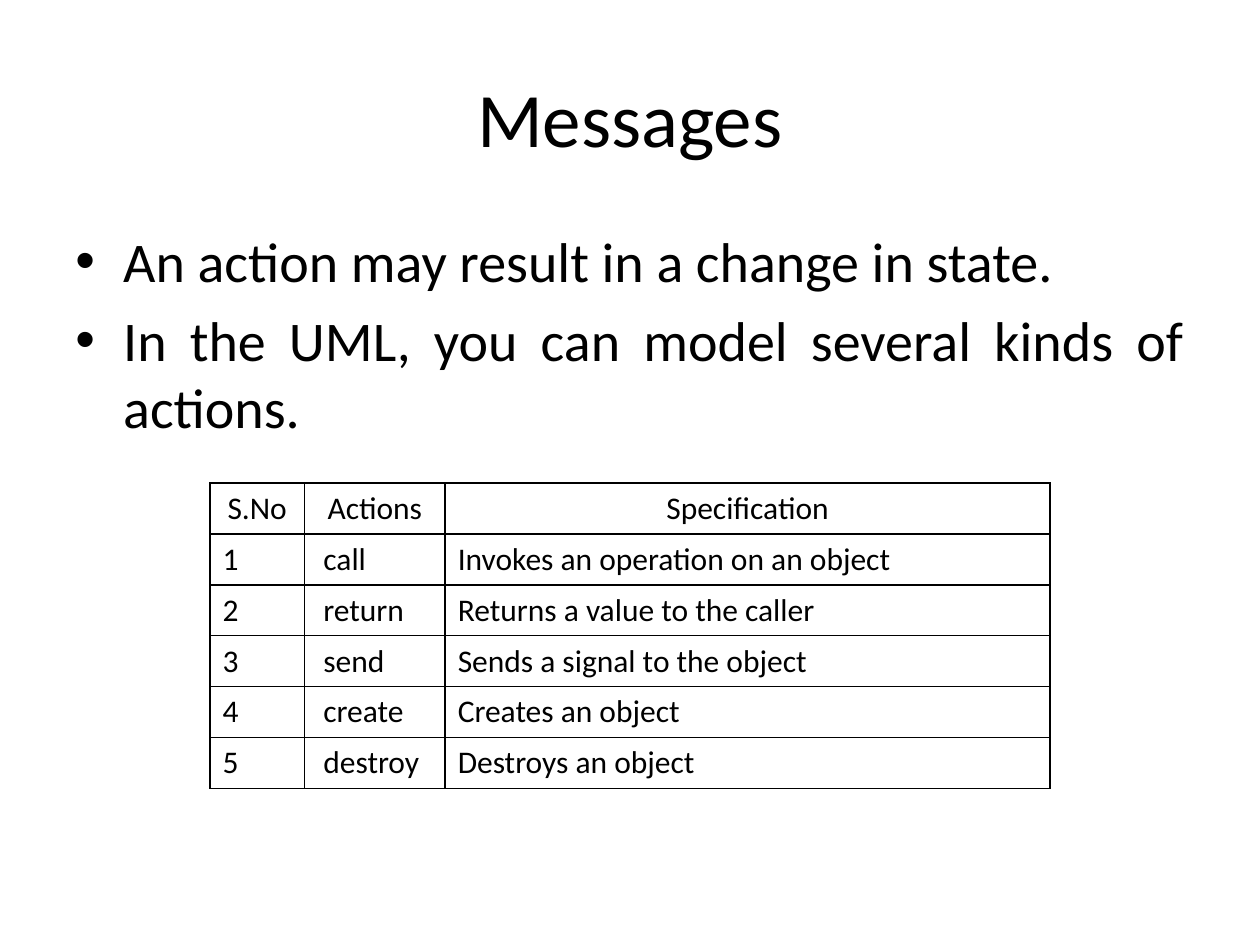
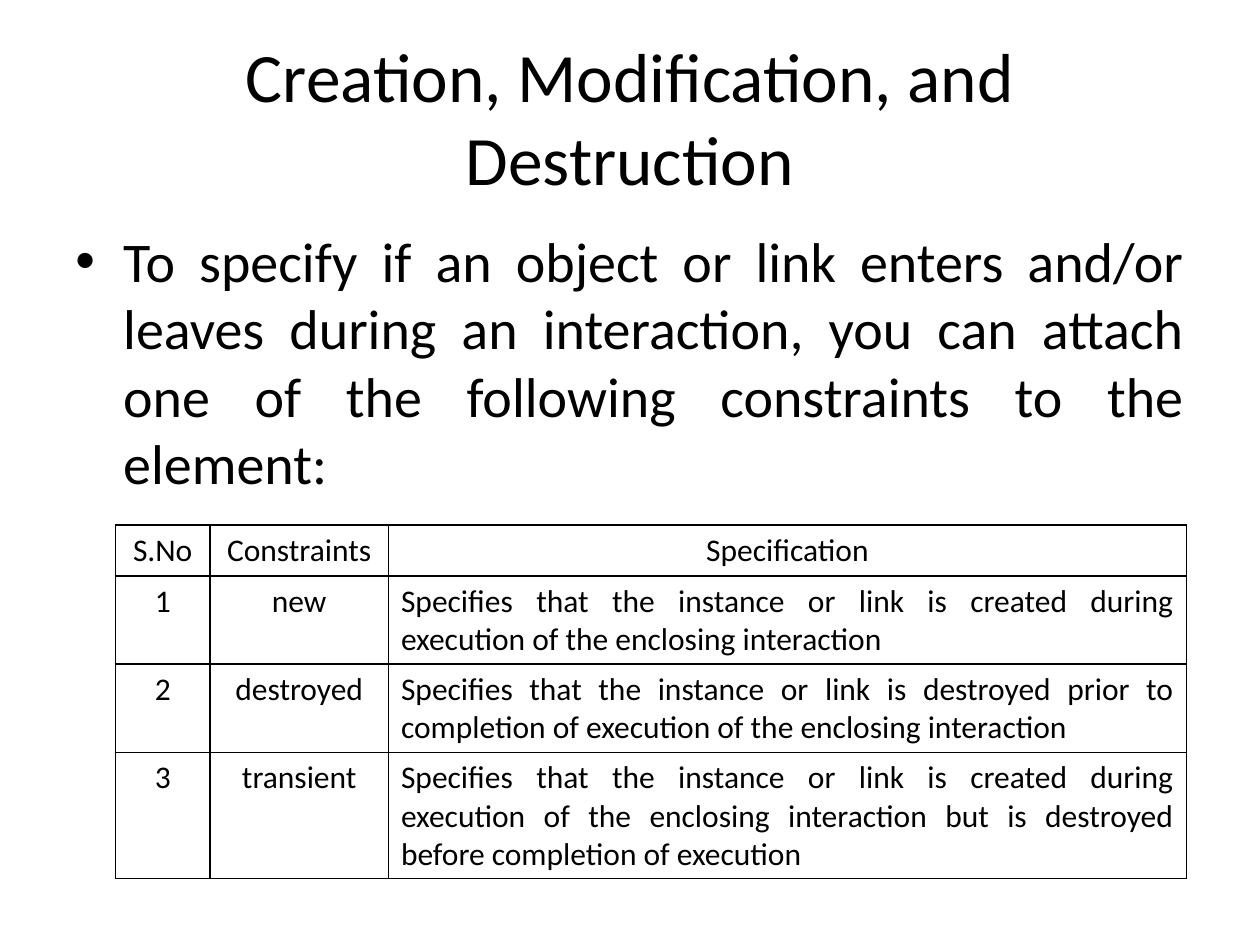
from lxml.etree import SubElement
from pptx import Presentation
from pptx.dml.color import RGBColor
from pptx.enum.text import MSO_ANCHOR, PP_ALIGN
from pptx.oxml.ns import qn
from pptx.util import Inches, Pt

ACTIONS = [
    ("S.No", "Actions", "Specification"),
    ("1", "call", "Invokes an operation on an object"),
    ("2", "return", "Returns a value to the caller"),
    ("3", "send", "Sends a signal to the object"),
    ("4", "create", "Creates an object"),
    ("5", "destroy", "Destroys an object"),
]
CONSTRAINTS = [
    ("S.No", "Constraints", "Specification"),
    ("1", "new", "Specifies that the instance or link is created during "
     "execution of the enclosing interaction"),
    ("2", "destroyed", "Specifies that the instance or link is destroyed prior to "
     "completion of execution of the enclosing interaction"),
    ("3", "transient", "Specifies that the instance or link is created during "
     "execution of the enclosing interaction but is destroyed before "
     "completion of execution"),
]


def color(value):
    return RGBColor.from_string(value)


class Deck:
    """Build slides on a grid of 12 columns and 18 rows in one shared style."""

    font = "Calibri"
    ink = "000000"
    paper = "FFFFFF"

    def __init__(self):
        self.presentation = Presentation()
        self.presentation.slide_width = Inches(10)
        self.presentation.slide_height = Inches(7.5)
        self.column = self.presentation.slide_width / 12
        self.row = self.presentation.slide_height / 18
        self.slide = None

    def box(self, left, top, width, height):
        return (round(left * self.column), round(top * self.row),
                round(width * self.column), round(height * self.row))

    def add_slide(self, title, title_size=44):
        self.slide = self.presentation.slides.add_slide(self.presentation.slide_layouts[6])
        frame = self.add_frame(0.72, 3)
        frame.vertical_anchor = MSO_ANCHOR.MIDDLE
        frame.text = title
        self.style(frame.paragraphs[0], title_size, PP_ALIGN.CENTER)

    def add_frame(self, top, height):
        shape = self.slide.shapes.add_textbox(*self.box(0.6, top, 10.8, height))
        shape.text_frame.word_wrap = True
        return shape.text_frame

    def style(self, paragraph, size, alignment):
        paragraph.alignment = alignment
        for run in paragraph.runs:
            run.font.name = self.font
            run.font.size = Pt(size)
            run.font.color.rgb = color(self.ink)

    def add_bullets(self, *lines):
        frame = self.add_frame(4.2, 11.88)
        frame.text = "\n".join(lines)
        for paragraph in frame.paragraphs:
            self.style(paragraph, 32, PP_ALIGN.JUSTIFY)
            paragraph.space_before = Pt(6.4)
            properties = paragraph._p.get_or_add_pPr()
            properties.set("marL", str(Inches(0.38)))
            properties.set("indent", str(-Inches(0.38)))
            SubElement(properties, qn("a:buFont"), typeface="Arial")
            SubElement(properties, qn("a:buChar"), char="•")

    def add_table(self, rows, left, top, widths, alignments, name_margin=0.1):
        area = self.box(left, top, sum(widths), 0.97 * len(rows))
        table = self.slide.shapes.add_table(len(rows), len(widths), *area).table
        table.first_row = table.horz_banding = False
        for column, width in zip(table.columns, widths):
            column.width = round(width * self.column)
        for row_index, texts in enumerate(rows):
            for column_index, text in enumerate(texts):
                cell = table.cell(row_index, column_index)
                cell.text_frame.text = text
                header = row_index == 0
                alignment = PP_ALIGN.CENTER if header else alignments[column_index]
                self.style(cell.text_frame.paragraphs[0], 18, alignment)
                if column_index == 1 and not header:
                    cell.margin_left = Inches(name_margin)
                self.add_borders(cell)
                cell.fill.solid()
                cell.fill.fore_color.rgb = color(self.paper)

    def add_borders(self, cell):
        properties = cell._tc.get_or_add_tcPr()
        for side in ("lnL", "lnR", "lnT", "lnB"):
            line = SubElement(properties, qn(f"a:{side}"), w=str(Pt(1)))
            fill = SubElement(line, qn("a:solidFill"))
            SubElement(fill, qn("a:srgbClr"), val=self.ink)


def main():
    deck = Deck()
    centre, justify = PP_ALIGN.CENTER, PP_ALIGN.JUSTIFY

    deck.add_slide("Messages")
    deck.add_bullets("An action may result in a change in state.",
                     "In the UML, you can model several kinds of actions.")
    deck.add_table(ACTIONS, 2, 9.2, (0.9, 1.34, 5.76), (justify,) * 3, name_margin=0.15)

    deck.add_slide("Creation, Modification, and Destruction", title_size=39.6)
    deck.add_bullets("To specify if an object or link enters and/or leaves during an "
                     "interaction, you can attach one of the following constraints "
                     "to the element:")
    deck.add_table(CONSTRAINTS, 1.1, 10, (0.9, 1.7, 7.6), (centre, centre, justify))

    deck.presentation.save("out.pptx")


if __name__ == "__main__":
    main()
